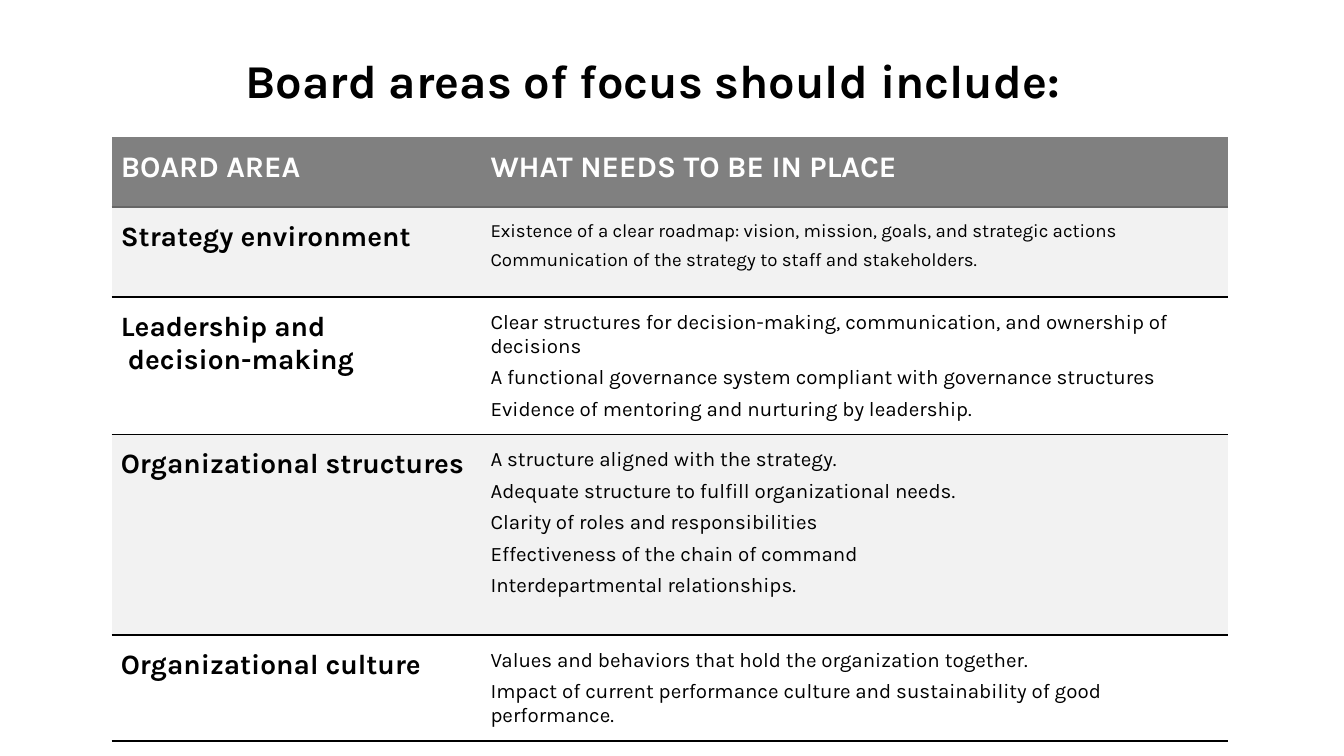
from dataclasses import dataclass

from lxml import etree
from pptx import Presentation
from pptx.dml.color import RGBColor
from pptx.enum.text import MSO_ANCHOR, MSO_AUTO_SIZE, PP_ALIGN
from pptx.oxml.ns import qn
from pptx.util import Inches, Pt

CENTER = PP_ALIGN.CENTER
MIDDLE = MSO_ANCHOR.MIDDLE
NO_AUTOFIT = MSO_AUTO_SIZE.NONE
TITLE_ONLY = 5


@dataclass(frozen=True)
class Theme:
    font: str = "Karla"
    text: str = "000000"
    header_text: str = "FFFFFF"
    header_fill: str = "808080"
    header_rule: str = "666666"
    band: str = "F2F2F2"
    plain: str = "FFFFFF"
    title_size: float = 25.2
    header_size: int = 16
    area_size: int = 15
    gap: int = 4


HEADER = ("BOARD AREA", "WHAT NEEDS TO BE IN PLACE")
# Area, size of its points, points
AREAS = [
    ("Strategy environment", 10, [
        "Existence of a clear roadmap: vision, mission, goals, and strategic actions",
        "Communication of the strategy to staff and stakeholders.",
    ]),
    ("Leadership and\n decision-making", 11, [
        "Clear structures for decision-making, communication, and ownership of decisions",
        "A functional governance system compliant with governance structures",
        "Evidence of mentoring and nurturing by leadership.",
    ]),
    ("Organizational structures", 11, [
        "A structure aligned with the strategy.",
        "Adequate structure to fulfill organizational needs.",
        "Clarity of roles and responsibilities",
        "Effectiveness of the chain of command",
        "Interdepartmental relationships.",
    ]),
    ("Organizational culture", 11, [
        "Values and behaviors that hold the organization together.",
        "Impact of current performance culture and sustainability of good performance.",
    ]),
]
COLUMN_WIDTHS = (2.75, 5.56)
ROW_HEIGHTS = (0.52, 0.67, 0.97, 1.49, 0.71)


class SlideBuilder:
    def __init__(self, prs, theme):
        self.theme = theme
        self.slide = prs.slides.add_slide(prs.slide_layouts[TITLE_ONLY])

    def style(self, p, size, color, bold=False):
        p.font.name = self.theme.font
        p.font.size = Pt(size)
        p.font.bold = bold
        p.font.color.rgb = RGBColor.from_string(color)

    def title(self, text, x, y, w, h):
        s = self.slide.shapes.title
        s.left, s.top, s.width, s.height = map(Inches, (x, y, w, h))
        tf = s.text_frame
        tf.auto_size = NO_AUTOFIT
        tf.vertical_anchor = MIDDLE
        tf.margin_left = tf.margin_right = Inches(0.1)
        tf.margin_top = tf.margin_bottom = Inches(0.1)
        p = tf.paragraphs[0]
        p.text = text
        p.alignment = CENTER
        self.style(p, self.theme.title_size, self.theme.text, bold=True)

    def table(self, x, y, widths, heights):
        frame = self.slide.shapes.add_table(
            len(heights), len(widths), Inches(x), Inches(y),
            Inches(sum(widths)), Inches(sum(heights)))
        table = frame.table
        table.first_row = table.horz_banding = False
        for column, width in zip(table.columns, widths):
            column.width = Inches(width)
        for row, height in zip(table.rows, heights):
            row.height = Inches(height)
        return table

    def cell(self, cell, lines, size, color, fill, bold=False):
        cell.margin_left = cell.margin_right = Inches(0.07)
        cell.margin_top = cell.margin_bottom = Inches(0.1)
        cell.fill.solid()
        cell.fill.fore_color.rgb = RGBColor.from_string(fill)
        tf = cell.text_frame
        for i, line in enumerate(lines):
            p = tf.add_paragraph() if i else tf.paragraphs[0]
            p.text = line
            p.space_before = Pt(self.theme.gap if i else 0)
            p.space_after = Pt(0)
            self.style(p, size, color, bold)
        p.space_after = Pt(self.theme.gap)

    def rules(self, cell, top, bottom):
        """Draw 1 pt rules above and below a cell and clear its sides."""
        tc_pr = cell._tc.get_or_add_tcPr()
        edges = (("a:lnL", None), ("a:lnR", None), ("a:lnT", top), ("a:lnB", bottom))
        for i, (tag, color) in enumerate(edges):
            line = etree.Element(qn(tag), w=str(Pt(1)))
            if color:
                fill = etree.SubElement(line, qn("a:solidFill"))
                etree.SubElement(fill, qn("a:srgbClr"), val=color)
            else:
                etree.SubElement(line, qn("a:noFill"))
            tc_pr.insert(i, line)


def main():
    prs = Presentation()
    prs.slide_width = Inches(10)
    prs.slide_height = prs.slide_width * 9 // 16
    theme = Theme()
    builder = SlideBuilder(prs, theme)
    builder.title("Board areas of focus should include: ", 0.24, 0.28, 9.32, 0.63)
    table = builder.table(0.83, 1.02, COLUMN_WIDTHS, ROW_HEIGHTS)

    for col, heading in enumerate(HEADER):
        cell = table.cell(0, col)
        builder.cell(cell, [heading], theme.header_size, theme.header_text,
                     theme.header_fill, bold=True)
        builder.rules(cell, None, theme.header_rule)

    for row, (area, size, points) in enumerate(AREAS, start=1):
        fill = theme.band if row % 2 else theme.plain
        area_cell, points_cell = table.cell(row, 0), table.cell(row, 1)
        builder.cell(area_cell, [area], theme.area_size, theme.text, fill, bold=True)
        builder.cell(points_cell, points, size, theme.text, fill)
        top = theme.header_rule if row == 1 else theme.text
        for cell in (area_cell, points_cell):
            builder.rules(cell, top, theme.text)

    prs.save("out.pptx")


if __name__ == "__main__":
    main()
